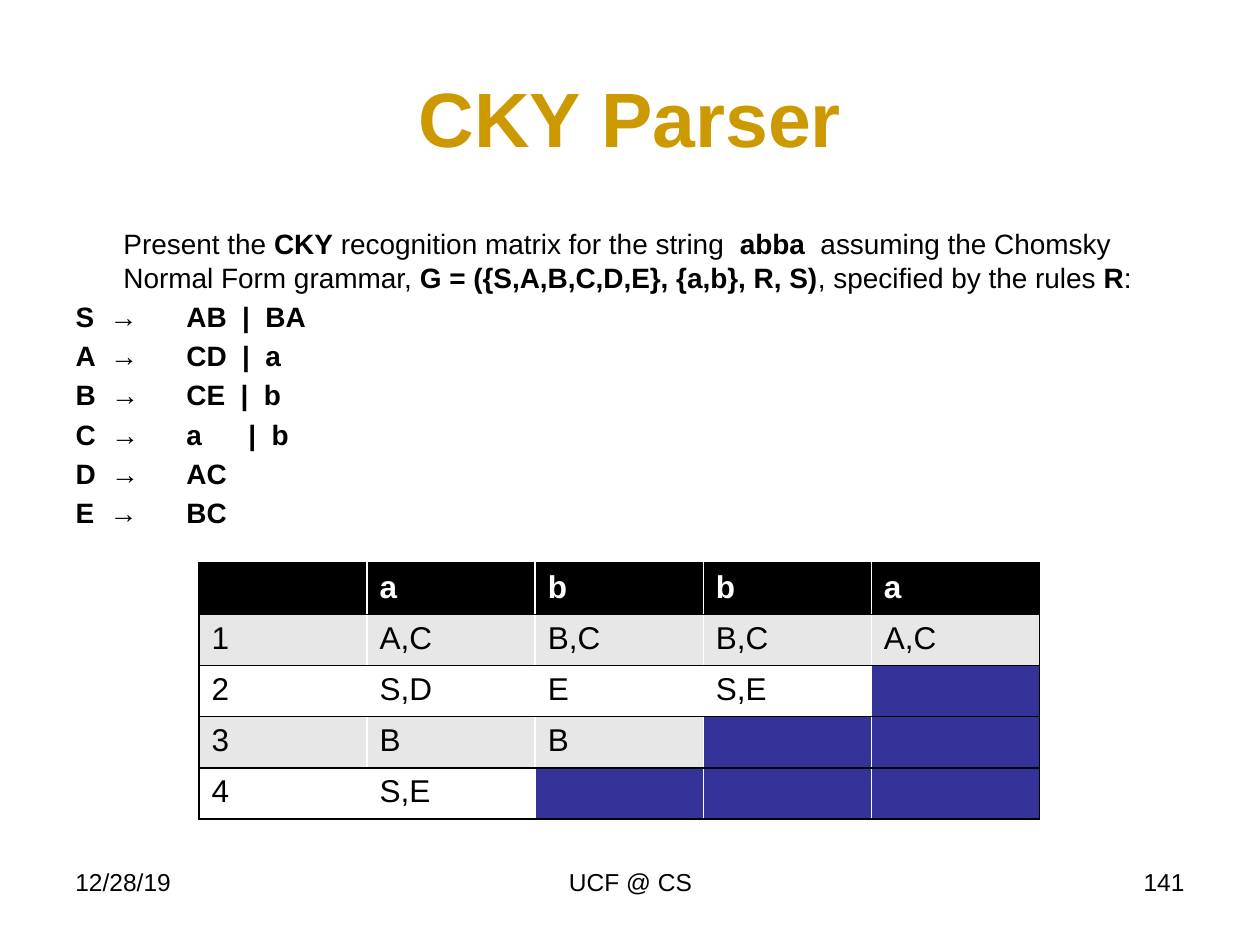
"""Builds the CKY Parser slide with its grammar and recognition matrix."""
from pptx import Presentation
from pptx.dml.color import RGBColor
from pptx.enum.text import MSO_ANCHOR, MSO_AUTO_SIZE, PP_ALIGN
from pptx.oxml.ns import qn
from pptx.util import Inches, Pt
from lxml.etree import SubElement

INK = {"gold": "CC9900", "black": "000000", "white": "FFFFFF",
       "gray": "E7E7E7", "blue": "333399"}

INTRO = [("Present the ", False), ("CKY", True),
         (" recognition matrix for the string  ", False), ("abba  ", True),
         ("assuming the Chomsky Normal Form grammar, ", False),
         ("G = ({S,A,B,C,D,E}, {a,b}, R, S)", True),
         (", specified by the rules ", False), ("R", True), (":", False)]

RULES = [("S", "AB  |  BA"), ("A", "CD  |  a"), ("B", "CE  |  b"),
         ("C", "a      |  b"), ("D", "AC"), ("E", "BC")]

MATRIX = [["", "a", "b", "b", "a"],
          ["1", "A,C", "B,C", "B,C", "A,C"],
          ["2", "S,D", "E", "S,E", ""],
          ["3", "B", "B", "", ""],
          ["4", "S,E", "", "", ""]]


def write(para, text, size=16, color="black", bold=False, align=None):
    """Add a formatted run to a paragraph."""
    run = para.add_run()
    run.text = text
    font = run.font
    font.name, font.size, font.bold = "Arial", Pt(size), bold
    font.color.rgb = RGBColor.from_string(INK[color])
    if align is not None:
        para.alignment = align


def place(shape, left, top, width, height):
    """Move and size a shape, in inches."""
    shape.left, shape.top = Inches(left), Inches(top)
    shape.width, shape.height = Inches(width), Inches(height)


def edge(cell, sides):
    """Draw thin black borders on the named sides of a cell."""
    props = cell._tc.get_or_add_tcPr()
    for spot, side in enumerate(sides):
        line = props.makeelement(qn(f"a:ln{side}"), {"w": str(Pt(1))})
        fill = SubElement(line, qn("a:solidFill"))
        SubElement(fill, qn("a:srgbClr"), val=INK["black"])
        props.insert(spot, line)


class Deck:
    """Holds the presentation and the current slide."""

    def __init__(self):
        self.prs = Presentation()
        self.prs.slide_width, self.prs.slide_height = Inches(10), Inches(7.5)
        self.slide = self.prs.slides.add_slide(self.prs.slide_layouts[1])

    def title(self, text, *box):
        """Fill the title placeholder."""
        shape = self.slide.shapes.title
        place(shape, *box)
        shape.text_frame.vertical_anchor = MSO_ANCHOR.MIDDLE
        write(shape.text_frame.paragraphs[0], text, size=44, color="gold",
              bold=True, align=PP_ALIGN.CENTER)

    def body(self, intro, rules, *box):
        """Fill the body placeholder with the task and the grammar rules."""
        shape = self.slide.placeholders[1]
        place(shape, *box)
        frame = shape.text_frame
        frame.auto_size = MSO_AUTO_SIZE.NONE
        para = frame.paragraphs[0]
        self.indent(para, 0)
        for text, bold in intro:
            write(para, text, bold=bold)
        for left, right in rules:
            para = frame.add_paragraph()
            tabs = SubElement(self.indent(para, -0.38), qn("a:tabLst"))
            SubElement(tabs, qn("a:tab"), pos=str(Inches(1)), algn="l")
            write(para, f"{left}  →\t{right}", bold=True)

    def indent(self, para, first):
        """Set spacing and indents without a bullet."""
        para.space_before = Pt(3.2)
        props = para._p.get_or_add_pPr()
        props.set("marL", str(Inches(0.38)))
        props.set("indent", str(Inches(first)))
        SubElement(props, qn("a:buNone"))
        return props

    def note(self, text, align, *box):
        """Add one footer text."""
        shape = self.slide.shapes.add_textbox(*map(Inches, box))
        shape.text_frame.word_wrap = True
        write(shape.text_frame.paragraphs[0], text, size=14, align=align)

    def table(self, rows, *box):
        """Add the recognition matrix."""
        last = len(rows[0]) - 1
        grid = self.slide.shapes.add_table(
            len(rows), last + 1, *map(Inches, box)).table
        grid.first_row = grid.horz_banding = False
        for r, row in enumerate(rows):
            band = "black" if r == 0 else "gray" if r % 2 else "white"
            for c, text in enumerate(row):
                cell = grid.cell(r, c)
                cell.fill.solid()
                tint = band if text or r == 0 else "blue"
                cell.fill.fore_color.rgb = RGBColor.from_string(INK[tint])
                if text:
                    write(cell.text_frame.paragraphs[0], text, size=18,
                          color="black" if r else "white", bold=r == 0)
                edge(cell, "L" * (c == 0) + "R" * (c == last) + "TB")


def main():
    """Build and save the slide."""
    deck = Deck()
    deck.title("CKY Parser", 0.5, 0.3, 9, 1.25)
    deck.body(INTRO, RULES, 0.5, 1.75, 9, 4.95)
    deck.note("12/28/19", PP_ALIGN.LEFT, 0.5, 6.83, 2.33, 0.52)
    deck.note("UCF @ CS", PP_ALIGN.CENTER, 3.42, 6.83, 3.17, 0.52)
    deck.note("141", PP_ALIGN.RIGHT, 7.17, 6.83, 2.33, 0.52)
    deck.table(MATRIX, 1.58, 4.47, 6.67, 2.03)
    deck.prs.save("out.pptx")


if __name__ == "__main__":
    main()
